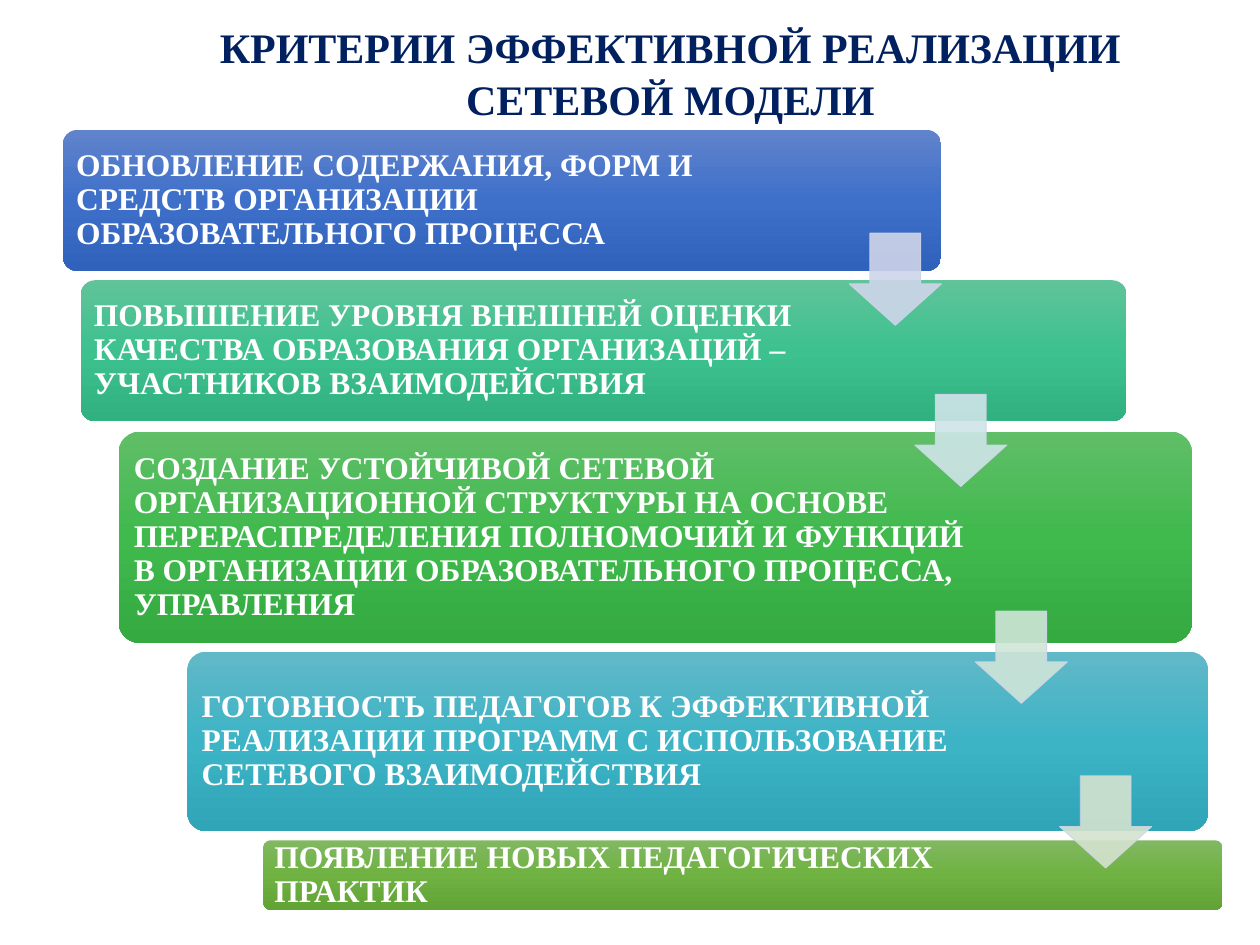
from lxml import etree
from pptx import Presentation
from pptx.dml.color import RGBColor
from pptx.enum.shapes import MSO_SHAPE
from pptx.enum.text import MSO_ANCHOR, MSO_AUTO_SIZE, PP_ALIGN
from pptx.oxml.ns import qn
from pptx.util import Cm, Pt

ROUNDED = MSO_SHAPE.ROUNDED_RECTANGLE
DOWN_ARROW = MSO_SHAPE.DOWN_ARROW
MIDDLE = MSO_ANCHOR.MIDDLE
GROW = MSO_AUTO_SIZE.SHAPE_TO_FIT_TEXT
CENTER = PP_ALIGN.CENTER
LEFT = PP_ALIGN.LEFT

TITLE = ["КРИТЕРИИ ЭФФЕКТИВНОЙ РЕАЛИЗАЦИИ", "СЕТЕВОЙ МОДЕЛИ"]
CRITERIA = [
    ((1.27, 2.62, 17.7, 2.84), 14.3, ("6183CB", "3E70CA", "3062BB"),
     "ОБНОВЛЕНИЕ СОДЕРЖАНИЯ, ФОРМ И СРЕДСТВ ОРГАНИЗАЦИИ "
     "ОБРАЗОВАТЕЛЬНОГО ПРОЦЕССА"),
    ((1.63, 5.65, 21.08, 2.84), 17.12, ("60C39A", "3DC18F", "31B080"),
     "ПОВЫШЕНИЕ УРОВНЯ ВНЕШНЕЙ ОЦЕНКИ КАЧЕСТВА ОБРАЗОВАНИЯ "
     "ОРГАНИЗАЦИЙ – УЧАСТНИКОВ ВЗАИМОДЕЙСТВИЯ"),
    ((2.39, 8.7, 21.64, 4.26), 17.5, ("60BE68", "40B94D", "34AA41"),
     "СОЗДАНИЕ УСТОЙЧИВОЙ СЕТЕВОЙ ОРГАНИЗАЦИОННОЙ СТРУКТУРЫ НА ОСНОВЕ "
     "ПЕРЕРАСПРЕДЕЛЕНИЯ ПОЛНОМОЧИЙ И ФУНКЦИЙ В ОРГАНИЗАЦИИ "
     "ОБРАЗОВАТЕЛЬНОГО ПРОЦЕССА, УПРАВЛЕНИЯ"),
    ((3.78, 13.14, 20.57, 3.61), 16.66, ("61B8C7", "3DB4C6", "30A5B7"),
     "ГОТОВНОСТЬ ПЕДАГОГОВ К ЭФФЕКТИВНОЙ РЕАЛИЗАЦИИ ПРОГРАММ "
     "С ИСПОЛЬЗОВАНИЕ СЕТЕВОГО ВЗАИМОДЕЙСТВИЯ"),
    ((5.31, 16.94, 19.33, 1.4), 15.77, ("81B861", "6FB242", "62A336"),
     "ПОЯВЛЕНИЕ НОВЫХ ПЕДАГОГИЧЕСКИХ ПРАКТИК"),
]
ARROWS = [
    (17.12, 4.7, "CFD5EA"),
    (18.44, 7.95, "CFE5E8"),
    (19.66, 12.32, "CFE5D8"),
    (21.36, 15.64, "D5E3CF"),
]


def color(value):
    return RGBColor.from_string(value)


class CriteriaSlide:
    font_name = "Times New Roman"
    title_color = "002060"
    text_color = "FFFFFF"
    arrow_line = "CFD5EA"
    arrow_size = 1.86
    arrow_alpha = "90000"
    text_margin = 0.18
    corner_share = 0.03

    def __init__(self, slide):
        self.slide = slide

    def add_shape(self, kind, box, adjustments):
        shape = self.slide.shapes.add_shape(kind, *map(Cm, box))
        shape.shadow.inherit = False
        for index, value in enumerate(adjustments):
            shape.adjustments[index] = value
        return shape

    def add_text(self, box, lines, size, text_color, alignment, spacing):
        shape = self.slide.shapes.add_textbox(*map(Cm, box))
        frame = shape.text_frame
        frame.word_wrap = True
        frame.text = "\n".join(lines)
        for paragraph in frame.paragraphs:
            paragraph.alignment = alignment
            paragraph.line_spacing = spacing
            paragraph.font.name = self.font_name
            paragraph.font.size = Pt(size)
            paragraph.font.bold = True
            paragraph.font.color.rgb = color(text_color)
        return frame

    def add_title(self, box, lines):
        frame = self.add_text(box, lines, 24, self.title_color, CENTER, 1.05)
        frame.auto_size = GROW

    def add_criterion(self, box, text_width, gradient, text):
        shape = self.add_shape(ROUNDED, box, [0.1])
        shape.line.fill.background()
        shape.fill.gradient()
        shape.fill.gradient_angle = 270
        stops = next(shape._element.iter(qn("a:gsLst")))
        stops.clear()
        for position, value in zip(("0", "50000", "100000"), gradient):
            stop = etree.SubElement(stops, qn("a:gs"), pos=position)
            etree.SubElement(stop, qn("a:srgbClr"), val=value)

        left, top, width, height = box
        inset = height * self.corner_share
        text_box = (left + inset, top + inset, text_width, height - 2 * inset)
        frame = self.add_text(text_box, [text], 18, self.text_color, LEFT, 0.9)
        frame.vertical_anchor = MIDDLE
        frame.margin_left = frame.margin_right = Cm(self.text_margin)
        frame.margin_top = frame.margin_bottom = Cm(self.text_margin)
        frame.paragraphs[0].space_after = Pt(6.3)

    def add_arrow(self, left, top, fill):
        box = (left, top, self.arrow_size, self.arrow_size)
        shape = self.add_shape(DOWN_ARROW, box, [0.55, 0.45])
        shape.fill.solid()
        shape.fill.fore_color.rgb = color(fill)
        shape.line.color.rgb = color(self.arrow_line)
        shape.line.width = Pt(0.5)
        for element in list(shape._element.spPr.iter(qn("a:srgbClr"))):
            etree.SubElement(element, qn("a:alpha"), val=self.arrow_alpha)


def main():
    presentation = Presentation()
    presentation.slide_width = Cm(25.4)
    presentation.slide_height = Cm(19.05)
    slide = presentation.slides.add_slide(presentation.slide_layouts[6])
    criteria_slide = CriteriaSlide(slide)
    criteria_slide.add_title((2.39, 0.25, 22.25, 3.48), TITLE)
    for criterion in CRITERIA:
        criteria_slide.add_criterion(*criterion)
    for arrow in ARROWS:
        criteria_slide.add_arrow(*arrow)
    presentation.save("out.pptx")


if __name__ == "__main__":
    main()
